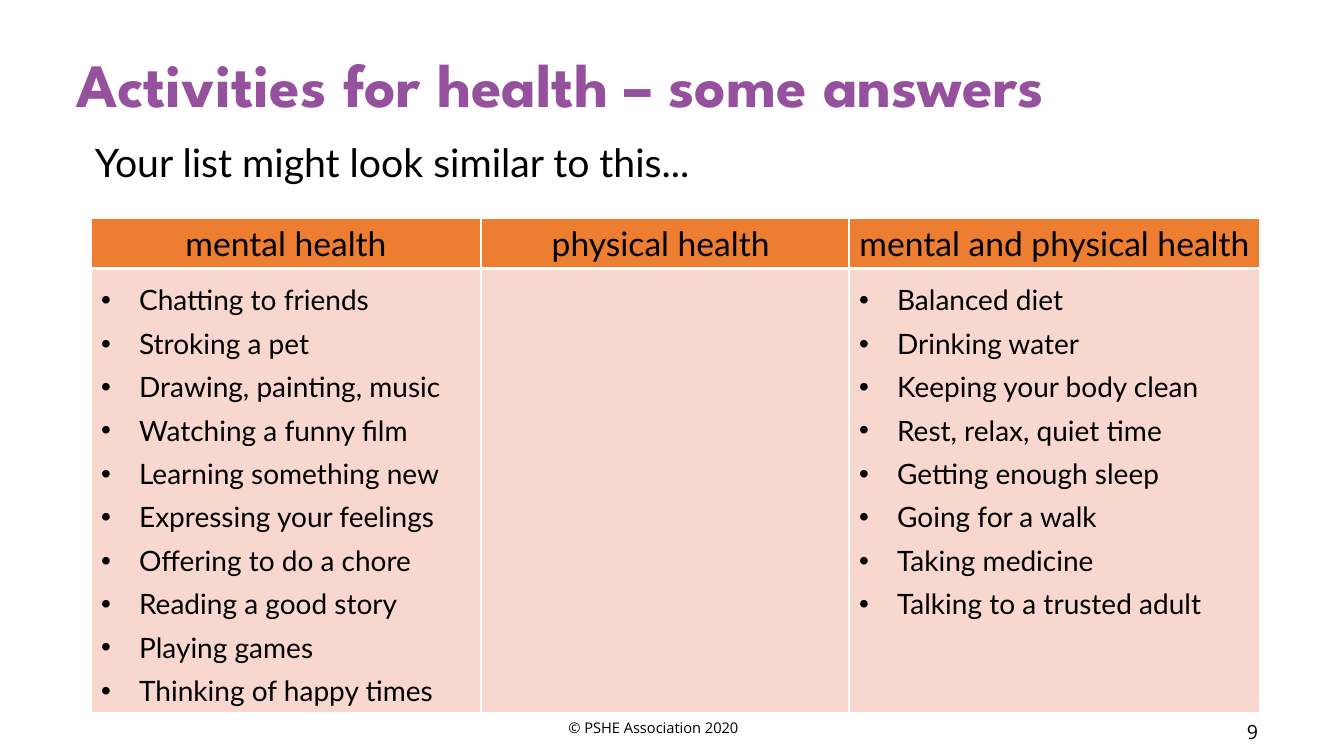
from lxml import etree
from pptx import Presentation
from pptx import util as u
from pptx.dml.color import RGBColor
from pptx.enum import text
from pptx.oxml import ns

TITLE = "Activities for health – some answers"
INTRO = "Your list might look similar to this..."
COPYRIGHT = "© PSHE Association 2020"
PAGE_NUMBER = "9"
# heading, column width in px, activities
COLUMNS = [
    ("mental health", 390, [
        "Chatting to friends", "Stroking a pet", "Drawing, painting, music",
        "Watching a funny film", "Learning something new",
        "Expressing your feelings", "Offering to do a chore",
        "Reading a good story", "Playing games", "Thinking of happy times"]),
    ("physical health ", 368, []),
    ("mental and physical health ", 411, [
        "Balanced diet", "Drinking water", "Keeping your body clean",
        "Rest, relax, quiet time", "Getting enough sleep", "Going for a walk",
        "Taking medicine", "Talking to a trusted adult"]),
]
TABLE_LEFT, TABLE_TOP = 91, 218
HEADER_HEIGHT, BODY_HEIGHT = 50, 443
INDENT = 38
BLACK, WHITE, PURPLE = "000000", "FFFFFF", "95519E"
ORANGE, PINK = "ED7D31", "F8D7CE"
LEFT, CENTER = text.PP_ALIGN.LEFT, text.PP_ALIGN.CENTER


def px(length):
    return u.Emu(round(length * 914400 / 100.8))


def color(value):
    return RGBColor.from_string(value)


def style(para, font, size, ink=BLACK, align=LEFT, bold=False):
    para.alignment = align
    for span in para.runs:
        span.font.name = font
        span.font.size = u.Pt(size)
        span.font.color.rgb = color(ink)
        span.font.bold = bold


def place(shape, left, top, width, height):
    shape.left, shape.top = px(left), px(top)
    shape.width, shape.height = px(width), px(height)


def add_text(page, words, bounds, font, size, align=LEFT):
    box = page.shapes.add_textbox(*map(px, bounds))
    box.text_frame.word_wrap = True
    box.text_frame.text = words
    style(box.text_frame.paragraphs[0], font, size, align=align)
    return box


def add_bullet(para):
    props = para._p.get_or_add_pPr()
    props.set("marL", str(px(INDENT)))
    props.set("indent", str(-px(INDENT)))
    etree.SubElement(props, ns.qn("a:buFont")).set("typeface", "Arial")
    etree.SubElement(props, ns.qn("a:buChar")).set("char", "•")


def paint_cell(cell, fill, bottom_width):
    """Fill the cell and give it white borders."""
    cell.fill.solid()
    cell.fill.fore_color.rgb = color(fill)
    props = cell._tc.get_or_add_tcPr()
    for index, side in enumerate("LRTB"):
        line = etree.Element(ns.qn(f"a:ln{side}"))
        line.set("w", str(u.Pt(bottom_width if side == "B" else 1)))
        solid = etree.SubElement(line, ns.qn("a:solidFill"))
        etree.SubElement(solid, ns.qn("a:srgbClr")).set("val", WHITE)
        props.insert(index, line)


def add_activities(page):
    widths = [width for _, width, _ in COLUMNS]
    table = page.shapes.add_table(
        2, len(COLUMNS), px(TABLE_LEFT), px(TABLE_TOP),
        px(sum(widths)), px(HEADER_HEIGHT + BODY_HEIGHT)).table
    table.horz_banding = False
    table.rows[0].height, table.rows[1].height = px(HEADER_HEIGHT), px(BODY_HEIGHT)
    for index, (heading, width, activities) in enumerate(COLUMNS):
        table.columns[index].width = px(width)
        header, body = table.cell(0, index), table.cell(1, index)
        paint_cell(header, ORANGE, 3)
        paint_cell(body, PINK, 1)
        header.text_frame.text = heading
        style(header.text_frame.paragraphs[0], "Lato", 24, align=CENTER)
        if activities:
            body.text_frame.text = "\n".join(activities)
            for para in body.text_frame.paragraphs:
                para.line_spacing = u.Pt(31)
                add_bullet(para)
                style(para, "Lato", 20)


def main():
    deck = Presentation()
    deck.slide_width, deck.slide_height = px(1344), px(756)
    page = deck.slides.add_slide(deck.slide_layouts[5])

    title = page.shapes.title
    place(title, 66, 41, 1181, 85)
    title.text_frame.text = TITLE
    title.text_frame.auto_size = text.MSO_AUTO_SIZE.NONE
    title.text_frame.vertical_anchor = text.MSO_ANCHOR.TOP
    style(title.text_frame.paragraphs[0], "League Spartan", 44, PURPLE, bold=True)

    add_text(page, INTRO, (85, 133, 1174, 57), "Lato", 28)
    footer = add_text(page, COPYRIGHT, (0, 708, 1344, 40), "Open Sans", 10.5, CENTER)
    footer.text_frame.vertical_anchor = text.MSO_ANCHOR.MIDDLE
    footer.text_frame.margin_right = px(47)
    add_text(page, PAGE_NUMBER, (1237, 715, 71, 40), "Open Sans", 14)
    add_activities(page)
    deck.save("out.pptx")


if __name__ == "__main__":
    main()
